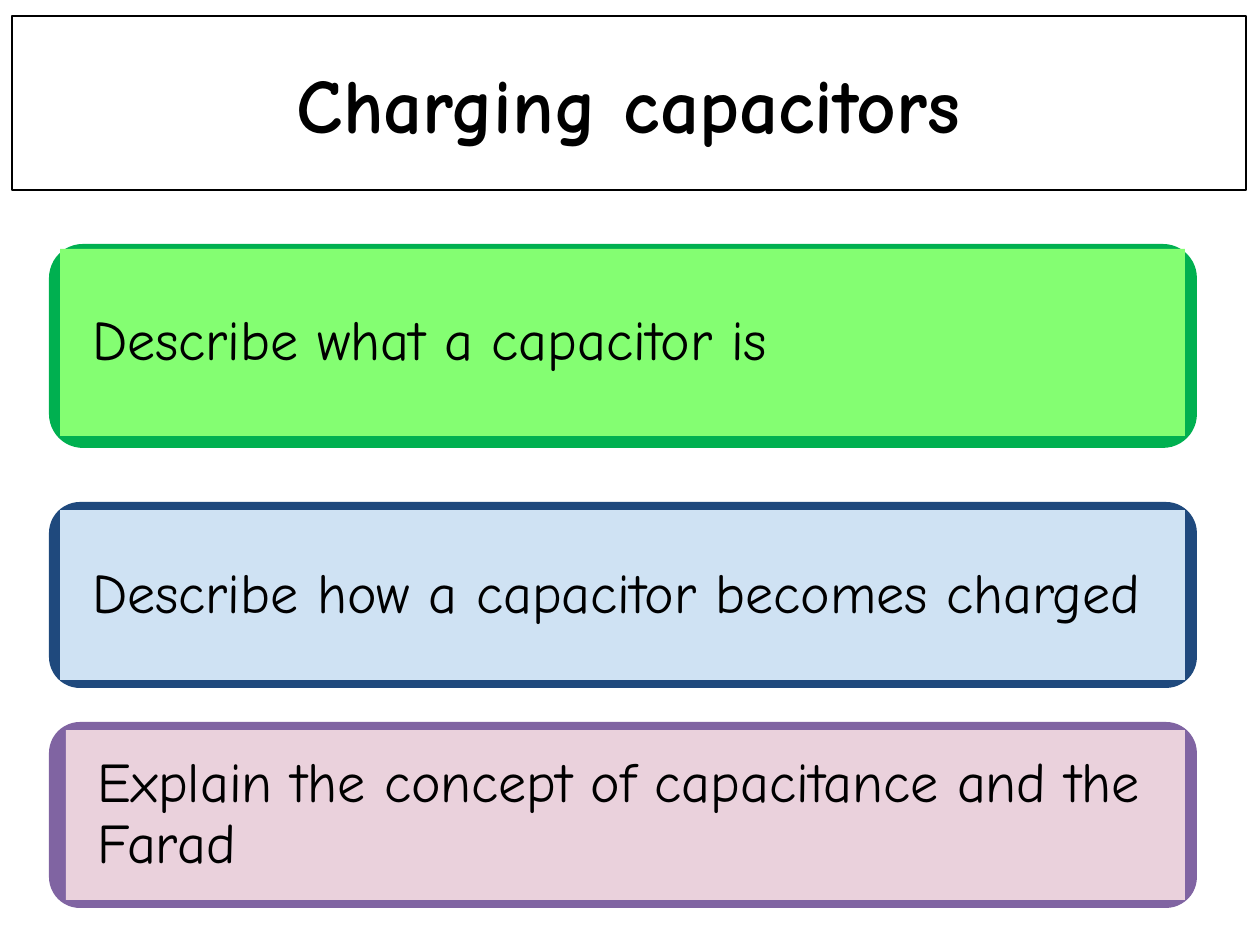
from dataclasses import dataclass

from pptx import Presentation
from pptx.dml.color import RGBColor
from pptx.enum.shapes import MSO_SHAPE as Shape
from pptx.enum.text import MSO_ANCHOR as Anchor, MSO_AUTO_SIZE as AutoSize, PP_ALIGN as Align
from pptx.util import Emu, Pt

EMU_PER_PX = 914400 / 126


@dataclass(frozen=True)
class Theme:
    """Colours and type sizes of the slide."""
    font: str = "Comic Neue"
    ink: str = "000000"
    paper: str = "FFFFFF"
    title_size: int = 44
    goal_size: int = 32
    green: tuple = ("00B050", "84FE72")
    blue: tuple = ("1F497D", "CFE2F3")
    purple: tuple = ("8064A2", "EAD1DC")


THEME = Theme()
FRAME_LEFT, FRAME_WIDTH, CARD_RIGHT = 49, 1148, 1185
GOALS = [
    ("Describe what a capacitor is", THEME.green, (244, 204), (60, 249, 187)),
    ("Describe how a capacitor becomes charged", THEME.blue, (502, 186), (60, 510, 170)),
    ("Explain the concept of capacitance and the Farad", THEME.purple, (722, 186), (66, 730, 170)),
]


def px(length):
    """Turn whole pixels into EMU."""
    return Emu(round(length * EMU_PER_PX))


def paint(shape, colour):
    """Fill a shape with one colour."""
    shape.fill.solid()
    shape.fill.fore_color.rgb = RGBColor.from_string(colour)


def write(paragraph, text, size, bold=False):
    """Add one formatted run to a paragraph."""
    run = paragraph.add_run()
    run.text = text
    run.font.name = THEME.font
    run.font.size = Pt(size)
    run.font.bold = bold
    run.font.color.rgb = RGBColor.from_string(THEME.ink)


def set_title(slide, text):
    """Place and format the title placeholder."""
    title = slide.shapes.title
    title.left, title.top, title.width, title.height = map(px, (12, 16, 1234, 174))
    paint(title, THEME.paper)
    title.line.color.rgb = RGBColor.from_string(THEME.ink)
    title.line.width = Pt(0.75)
    frame = title.text_frame
    frame.auto_size = AutoSize.NONE
    frame.vertical_anchor = Anchor.MIDDLE
    frame.paragraphs[0].alignment = Align.CENTER
    write(frame.paragraphs[0], text, THEME.title_size, bold=True)


def add_box(group, kind, box, colour):
    """Add a plain filled shape to the group."""
    shape = group.shapes.add_shape(kind, *map(px, box))
    shape.shadow.inherit = False
    shape.line.fill.background()
    paint(shape, colour)
    return shape


def add_goal(group, text, colours, frame_span, card_place):
    """Add a rounded frame with a text card on it."""
    top, height = frame_span
    left, card_top, card_height = card_place
    dark, light = colours
    add_box(group, Shape.ROUNDED_RECTANGLE, (FRAME_LEFT, top, FRAME_WIDTH, height), dark)
    card = add_box(group, Shape.RECTANGLE, (left, card_top, CARD_RIGHT - left, card_height), light)
    frame = card.text_frame
    frame.word_wrap = True
    frame.vertical_anchor = Anchor.MIDDLE
    frame.margin_left = frame.margin_right = px(32)
    frame.margin_top = frame.margin_bottom = 0
    paragraph = frame.paragraphs[0]
    paragraph.alignment = Align.LEFT
    paragraph.line_spacing = 0.9
    write(paragraph, text, THEME.goal_size)


def main():
    """Build and save the slide."""
    presentation = Presentation()
    presentation.slide_width, presentation.slide_height = px(1260), px(945)
    slide = presentation.slides.add_slide(presentation.slide_layouts[5])
    set_title(slide, "Charging capacitors")
    group = slide.shapes.add_group_shape()
    for goal in GOALS:
        add_goal(group, *goal)
    presentation.save("out.pptx")


if __name__ == "__main__":
    main()
